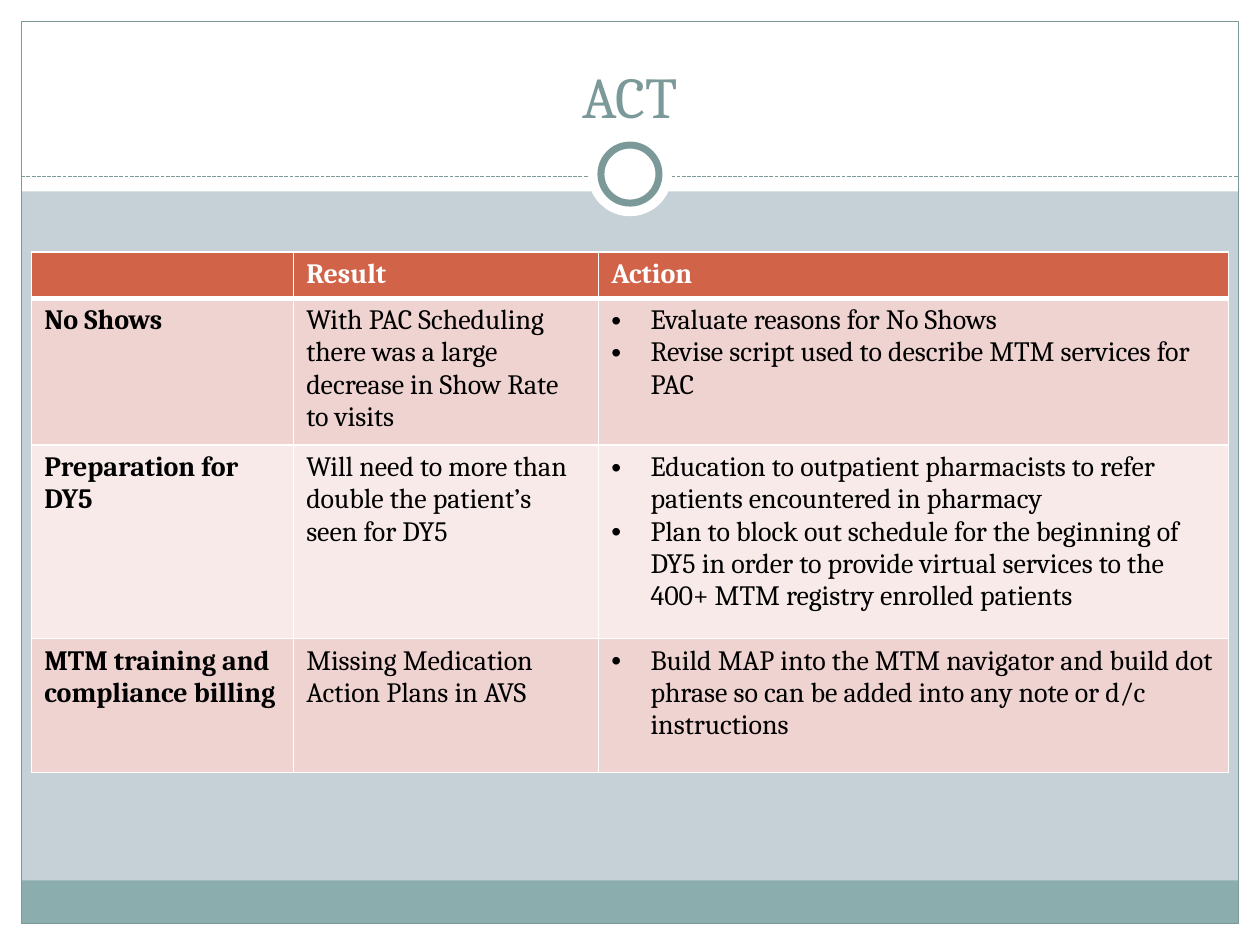
import pptx
import pptx.dml.color
import pptx.enum.dml
import pptx.enum.shapes
import pptx.enum.text
import pptx.oxml
import pptx.oxml.ns
import pptx.util
import lxml.etree

Cm = pptx.util.Cm
Pt = pptx.util.Pt
SHAPE = pptx.enum.shapes.MSO_SHAPE
FONT = "Cambria"
WHITE, TEAL, BLACK = "FFFFFF", "7C999A", "000000"
HEADER, BAND_DARK, BAND_LIGHT = "D16349", "EED3D0", "F7EAE9"
SLIDE_WIDTH, SLIDE_HEIGHT, MARGIN = 25.4, 19.05, 0.43

COLUMN_WIDTHS = [5.28, 6.15, 12.7]
ROW_HEIGHTS = [0.89, 2.92, 3.9, 2.7]
ROWS = [
    ["", "Result", "Action"],
    ["No Shows",
     "With PAC Scheduling there was a large decrease in Show Rate to visits",
     ["Evaluate reasons for No Shows",
      "Revise script used to describe MTM services for PAC"]],
    ["Preparation for DY5",
     "Will need to more than double the patient’s seen for DY5",
     ["Education to outpatient pharmacists to refer patients encountered in pharmacy",
      "Plan to block out schedule for the beginning of DY5 in order to provide "
      "virtual services to the 400+ MTM registry enrolled patients"]],
    ["MTM training and compliance billing",
     "Missing Medication Action Plans in AVS",
     ["Build MAP into the MTM navigator and build dot phrase so can be added "
      "into any note or d/c instructions"]],
]


def color(value):
    return pptx.dml.color.RGBColor.from_string(value)


def add_child(parent, tag, **attributes):
    return lxml.etree.SubElement(parent, pptx.oxml.ns.qn(tag), **attributes)


def add_box(page, kind, left, top, width, height, fill=None, line=None, weight=0.75):
    box = page.shapes.add_shape(kind, Cm(left), Cm(top), Cm(width), Cm(height))
    box.shadow.inherit = False
    if fill:
        box.fill.solid()
        box.fill.fore_color.rgb = color(fill)
    else:
        box.fill.background()
    if line:
        box.line.color.rgb = color(line)
        box.line.width = Pt(weight)
    else:
        box.line.fill.background()


def add_span(para, text, size, text_color, bold=False):
    span = para.add_run()
    span.text = text
    span.font.name = FONT
    span.font.size = Pt(size)
    span.font.bold = bold
    span.font.color.rgb = color(text_color)


def add_circle(page, center_x, center_y, diameter, **style):
    add_box(page, SHAPE.OVAL, center_x - diameter / 2, center_y - diameter / 2,
            diameter, diameter, **style)


def add_frame(page, left, top, width, height):
    right, bottom = left + width, top + height
    inner_width, inner_height = width - 2 * MARGIN, height - 2 * MARGIN
    for edge in [(left, bottom - MARGIN, width, MARGIN),
                 (left, top, width, 3.86),
                 (left, top, MARGIN, height),
                 (right - MARGIN, top, MARGIN, height)]:
        add_box(page, SHAPE.RECTANGLE, *edge, fill=WHITE)
    add_box(page, SHAPE.RECTANGLE, left + MARGIN, bottom - MARGIN - 0.87,
            inner_width, 0.87, fill="8CADAE")
    add_box(page, SHAPE.RECTANGLE, left + MARGIN, top + MARGIN,
            inner_width, inner_height, line=TEAL)
    divider = page.shapes.add_connector(
        pptx.enum.shapes.MSO_CONNECTOR.STRAIGHT,
        Cm(left + MARGIN), Cm(top + 3.56), Cm(right - MARGIN), Cm(top + 3.56))
    divider.line.color.rgb = color(TEAL)
    divider.line.width = Pt(0.75)
    divider.line.dash_style = pptx.enum.dml.MSO_LINE.SQUARE_DOT
    add_child(divider._element.spPr, "a:effectLst")
    center_x, center_y = left + width / 2, top + 3.51
    add_circle(page, center_x, center_y, 1.7, fill=WHITE)
    add_circle(page, center_x, center_y, 1.17, fill=WHITE, line=TEAL, weight=4)


def add_title(page, left, top, width, height, text):
    box = page.shapes.add_textbox(Cm(left), Cm(top), Cm(width), Cm(height))
    box.text_frame.word_wrap = True
    box.text_frame.vertical_anchor = pptx.enum.text.MSO_ANCHOR.BOTTOM
    para = box.text_frame.paragraphs[0]
    para.alignment = pptx.enum.text.PP_ALIGN.CENTER
    add_span(para, text, 33, TEAL)


def style_cell(cell, fill, bottom_weight):
    cell.fill.solid()
    cell.fill.fore_color.rgb = color(fill)
    properties = cell._tc.get_or_add_tcPr()
    weights = [("a:lnL", 1), ("a:lnR", 1), ("a:lnT", 1), ("a:lnB", bottom_weight)]
    for index, (tag, weight) in enumerate(weights):
        border = add_child(properties, tag, w=str(Pt(weight)))
        add_child(add_child(border, "a:solidFill"), "a:srgbClr", val=WHITE)
        properties.insert(index, border)


def add_bullet(para):
    properties = para._p.get_or_add_pPr()
    properties.set("marL", str(Cm(0.79)))
    properties.set("indent", str(-Cm(0.79)))
    add_child(properties, "a:buFont", typeface="Arial")
    add_child(properties, "a:buChar", char="•")


def fill_cell(cell, content, text_color, bold):
    bulleted = isinstance(content, list)
    frame = cell.text_frame
    for index, text in enumerate(content if bulleted else [content]):
        para = frame.add_paragraph() if index else frame.paragraphs[0]
        if bulleted:
            add_bullet(para)
        if text:
            add_span(para, text, 16, text_color, bold)
        else:
            add_child(para._p, "a:endParaRPr", sz="1600")


def add_action_table(page, left, top):
    grid = page.shapes.add_table(
        len(ROWS), len(COLUMN_WIDTHS), Cm(left), Cm(top),
        Cm(sum(COLUMN_WIDTHS)), Cm(sum(ROW_HEIGHTS))).table
    for column, width in zip(grid.columns, COLUMN_WIDTHS):
        column.width = Cm(width)
    for row_index, contents in enumerate(ROWS):
        grid.rows[row_index].height = Cm(ROW_HEIGHTS[row_index])
        is_header = row_index == 0
        band = BAND_DARK if row_index % 2 else BAND_LIGHT
        for column_index, content in enumerate(contents):
            cell = grid.cell(row_index, column_index)
            style_cell(cell, HEADER if is_header else band, 3 if is_header else 1)
            fill_cell(cell, content, WHITE if is_header else BLACK,
                      is_header or column_index == 0)
    for cell in grid.rows[1].cells:
        cell._tc.tcPr.find(pptx.oxml.ns.qn("a:lnT")).set("w", str(Pt(3)))


def main():
    deck = pptx.Presentation()
    deck.slide_width, deck.slide_height = Cm(SLIDE_WIDTH), Cm(SLIDE_HEIGHT)
    page = deck.slides.add_slide(deck.slide_layouts[6])
    page.background.fill.solid()
    page.background.fill.fore_color.rgb = color("C5D1D7")
    add_frame(page, 0, 0, SLIDE_WIDTH, SLIDE_HEIGHT)
    add_title(page, 0.85, 0.64, 23.7, 2.11, "ACT")
    add_action_table(page, 0.64, 5.08)
    deck.save("out.pptx")


if __name__ == "__main__":
    main()
